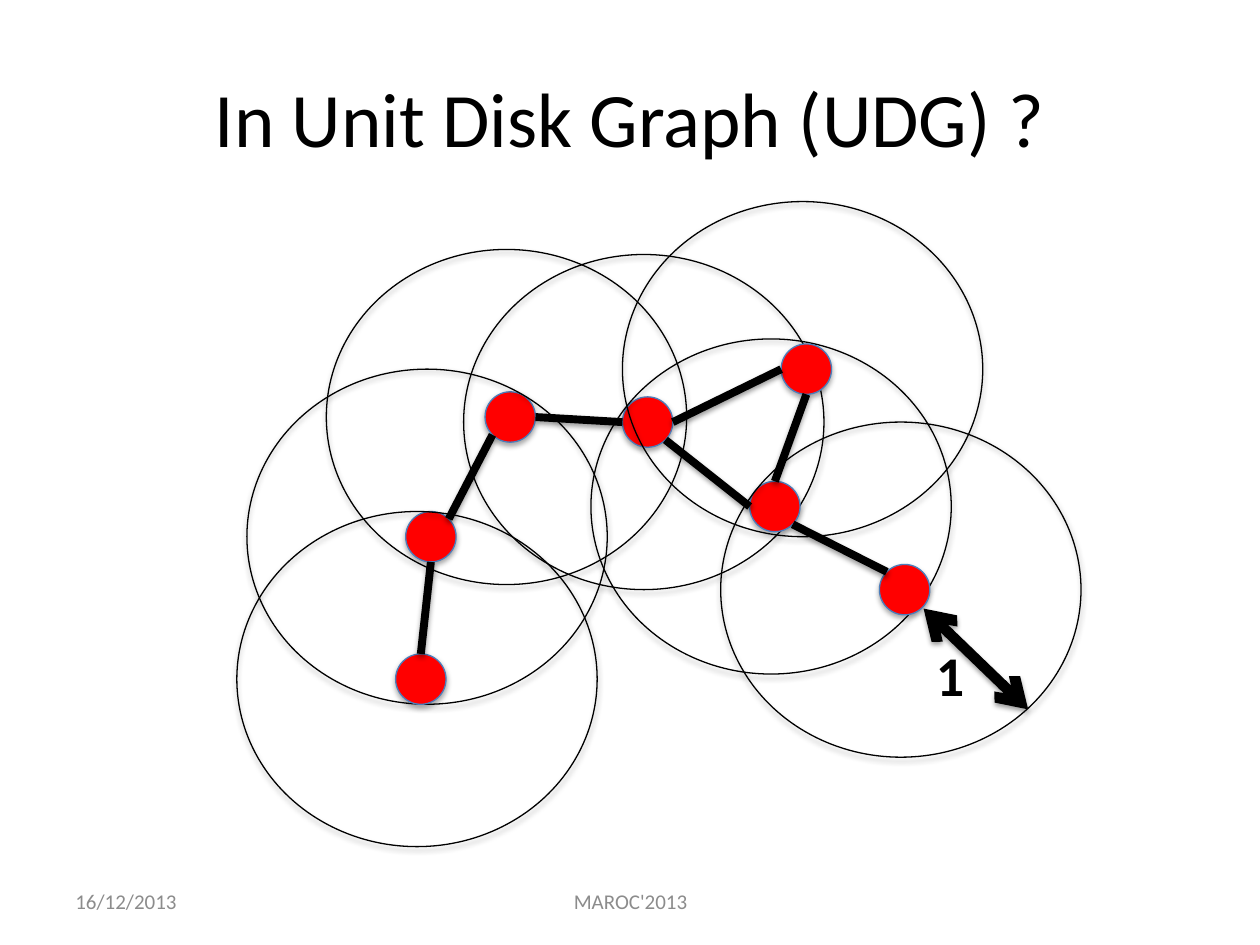
import math
import pptx
import pptx.util
import pptx.dml.color
import pptx.enum.shapes
import pptx.enum.text
import pptx.oxml
import pptx.oxml.ns

Inches = pptx.util.Inches
Pt = pptx.util.Pt
ALIGN = pptx.enum.text.PP_ALIGN
SIZE = 0.4
DISK = (2.86, 2.66)
SHIFT = (-1.26, -1.13)
NODES = {
    "B": (1.96, 1.5), "C": (3.05, 1.54), "D": (1.33, 2.45), "E": (1.25, 3.58),
    "F": (4.06, 2.21), "G": (4.31, 1.12), "H": (5.09, 2.87),
}
EDGES = [("F", 5, "H", 1), ("G", 4, "F", 0), ("C", 5, "F", 2), ("G", 2, "C", 6),
         ("B", 6, "C", 2), ("D", 7, "B", 3), ("E", 0, "D", 4)]


def color(code):
    """Turn a hex string into a colour."""
    return pptx.dml.color.RGBColor.from_string(code)


def shade(item, alpha):
    """Give a shape or connector a soft shadow below it."""
    item._element.spPr.append(pptx.oxml.parse_xml(
        f'<a:effectLst {pptx.oxml.ns.nsdecls("a")}>'
        f'<a:outerShdw blurRad="{Pt(3.1)}" dist="{Pt(1.7)}" dir="5400000" rotWithShape="0">'
        f'<a:srgbClr val="000000"><a:alpha val="{alpha * 1000}"/></a:srgbClr>'
        '</a:outerShdw></a:effectLst>'))


def write(frame, text, look, align=ALIGN.LEFT):
    """Fill a text frame and set its font from a dict."""
    frame.text = text
    frame.vertical_anchor = pptx.enum.text.MSO_ANCHOR.MIDDLE
    para = frame.paragraphs[0]
    para.alignment = align
    font = para.runs[0].font
    font.color.rgb = color(look["color"])
    for key, val in look["font"].items():
        setattr(font, key, val)


def label(slide, box, text, look, align=ALIGN.LEFT, wrap=True):
    """Place a text box."""
    frame = slide.shapes.add_textbox(*map(Inches, box)).text_frame
    write(frame, text, look, align)
    frame.word_wrap = wrap


def oval(group, box, fill, line):
    """Draw one ellipse of a node."""
    item = group.shapes.add_shape(
        pptx.enum.shapes.MSO_SHAPE.OVAL, *map(Inches, box))
    if fill:
        item.fill.solid()
        item.fill.fore_color.rgb = color(fill)
    else:
        item.fill.background()
    item.line.color.rgb = color(line)
    item.line.width = Pt(0.75)
    shade(item, 35)


def link(slide, start, end, width, heads=False):
    """Draw a straight black line, with arrowheads if asked."""
    item = slide.shapes.add_connector(
        pptx.enum.shapes.MSO_CONNECTOR.STRAIGHT, *map(Inches, start + end))
    item.line.color.rgb = color("000000")
    item.line.width = Pt(width)
    if heads:
        for tag in ("a:headEnd", "a:tailEnd"):
            tip = pptx.oxml.parse_xml(
                f'<{tag} {pptx.oxml.ns.nsdecls("a")} type="arrow"/>')
            item.line._get_or_add_ln().append(tip)
    shade(item, 38)


def site(node, step):
    """Find a rim point, counted in eighths from the top, anticlockwise."""
    turn = step * math.pi / 4
    half = SIZE / 2
    return (node[0] + half - half * math.sin(turn),
            node[1] + half - half * math.cos(turn))


def head(slide, box):
    """Fill and place the title."""
    title = slide.shapes.title
    for key, val in zip(("left", "top", "width", "height"), box):
        setattr(title, key, Inches(val))
    look = {"color": "000000", "font": {"name": "Calibri", "size": Pt(44)}}
    write(title.text_frame, "In Unit Disk Graph (UDG) ?", look, ALIGN.CENTER)


def graph(slide, box):
    """Draw the radius, the nodes with their disks, and the edges."""
    left, top = box[:2]
    spots = {name: (left + x, top + y) for name, (x, y) in NODES.items()}
    link(slide, (left + 6.27, top + 4.02), (left + 5.44, top + 3.22), 6, True)
    look = {"color": "000000",
            "font": {"name": "Calibri", "size": Pt(32), "bold": True}}
    label(slide, (left + 5.44, top + 3.42, 0.43, 0.64), "1", look, wrap=False)
    for x, y in spots.values():
        group = slide.shapes.add_group_shape()
        oval(group, (x, y, SIZE, SIZE), "FF0000", "4B7EBC")
        oval(group, (x + SHIFT[0], y + SHIFT[1], *DISK), None, "000000")
    for one, out, two, into in EDGES:
        link(slide, site(spots[one], out), site(spots[two], into), 4.5)


def foot(slide, box):
    """Place the date and the event name."""
    left, top, _, high = box
    look = {"color": "8C8C8C", "font": {"name": "Calibri", "size": Pt(12)}}
    label(slide, (left, top, 2.33, high), "16/12/2013", look)
    label(slide, (left + 2.92, top, 3.17, high), "MAROC'2013", look, ALIGN.CENTER)


def main():
    """Build and save the slide."""
    deck = pptx.Presentation()
    deck.slide_width, deck.slide_height = Inches(10), Inches(7.5)
    slide = deck.slides.add_slide(deck.slide_layouts[5])
    head(slide, (0.5, 0.3, 9, 1.25))
    foot(slide, (0.5, 6.95, 9, 0.4))
    graph(slide, (1.89, 1.61, 6.7, 5.11))
    deck.save("out.pptx")


if __name__ == "__main__":
    main()
